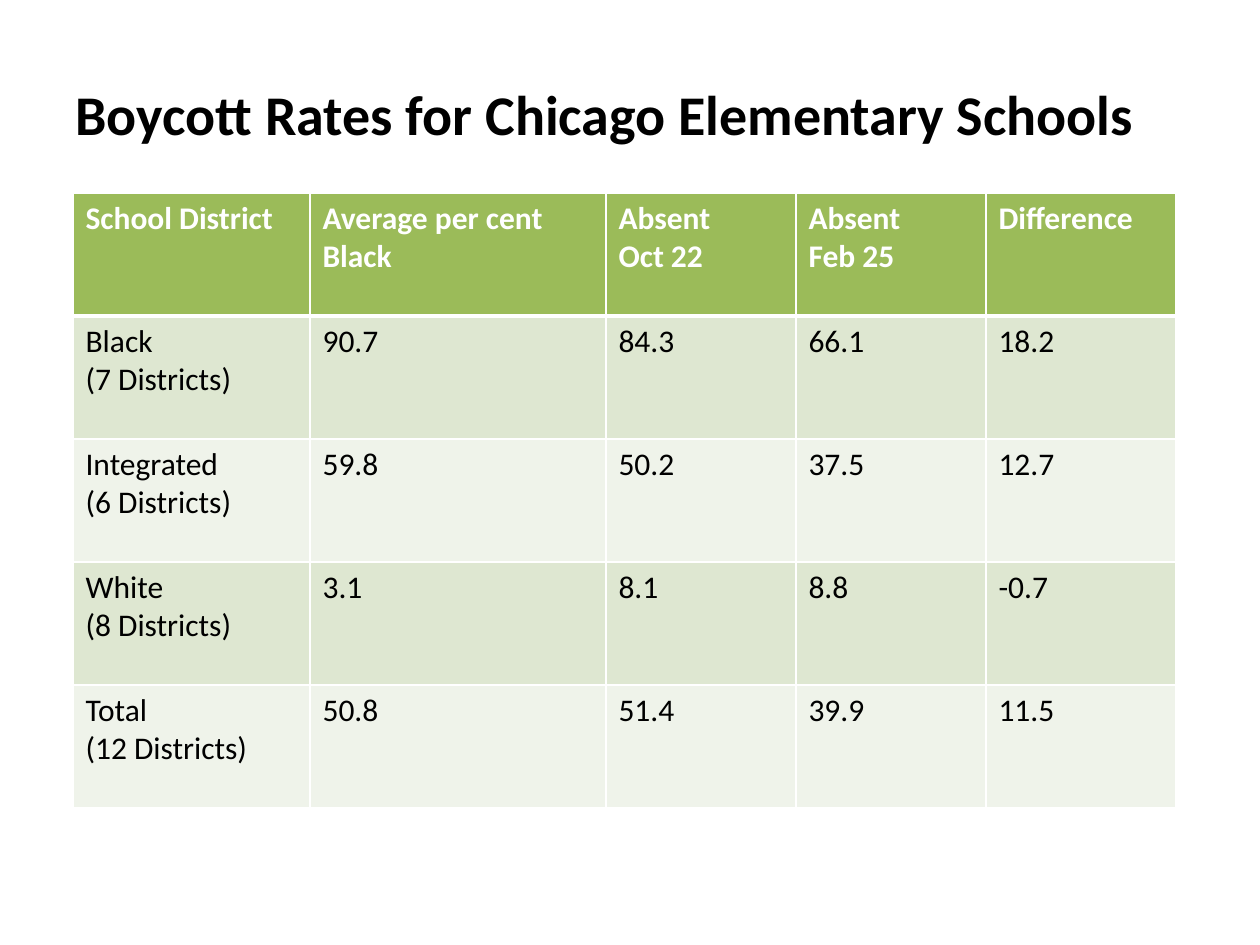
from lxml.etree import SubElement
from pptx import Presentation
from pptx.dml.color import RGBColor
from pptx.enum.text import MSO_ANCHOR, PP_ALIGN
from pptx.oxml.ns import qn
from pptx.util import Inches, Pt

PX = Inches(1) // 126
FONT = "Calibri"
HEADER_FILL, BAND_FILLS = "9BBB59", ("DEE7D1", "EFF3EA")
WHITE, BLACK = "FFFFFF", "000000"

TITLE = "Boycott Rates for Chicago Elementary Schools"
COL_WIDTHS = (237, 296, 190, 190, 190)
ROWS = (
    ("School District", "Average per cent Black", "Absent\nOct 22",
     "Absent\nFeb 25", "Difference"),
    ("Black\n(7 Districts)", "90.7", "84.3", "66.1", "18.2"),
    ("Integrated\n(6 Districts)", "59.8", "50.2", "37.5", "12.7"),
    ("White\n(8 Districts)", "3.1", "8.1", "8.8", "-0.7"),
    ("Total\n(12 Districts)", "50.8", "51.4", "39.9", "11.5"),
)


def px(*lengths):
    return [n * PX for n in lengths]


def rgb(value):
    return RGBColor.from_string(value)


def format_text(tf, size, color, bold):
    for p in tf.paragraphs:
        p.alignment = PP_ALIGN.LEFT
        for r in p.runs:
            values = {"name": FONT, "size": Pt(size), "bold": bold}
            for name, value in values.items():
                setattr(r.font, name, value)
            r.font.color.rgb = rgb(color)


def set_borders(cell, widths):
    """Draw white borders; widths maps a side (L, R, T, B) to points."""
    tc_pr = cell._tc.get_or_add_tcPr()
    for i, (side, width) in enumerate(widths.items()):
        line = SubElement(tc_pr, qn(f"a:ln{side}"), w=str(Pt(width)))
        fill = SubElement(line, qn("a:solidFill"))
        SubElement(fill, qn("a:srgbClr"), val=WHITE)
        tc_pr.insert(i, line)  # borders precede the cell fill


def add_title(slide, left, top, width, height):
    sp = slide.shapes.title
    sp.left, sp.top, sp.width, sp.height = px(left, top, width, height)
    tf = sp.text_frame
    tf.text = TITLE
    tf.word_wrap = False
    tf.vertical_anchor = MSO_ANCHOR.TOP
    format_text(tf, 32, BLACK, True)


def add_rates_table(slide, left, top, width, height):
    table = slide.shapes.add_table(
        len(ROWS), len(COL_WIDTHS), *px(left, top, width, height)).table
    for column, col_width in zip(table.columns, COL_WIDTHS):
        column.width = col_width * PX
    for i, texts in enumerate(ROWS):
        header = i == 0
        fill = HEADER_FILL if header else BAND_FILLS[(i - 1) % 2]
        for j, text in enumerate(texts):
            cell = table.cell(i, j)
            cell.text = text
            format_text(cell.text_frame, 18, WHITE if header else BLACK, header)
            cell.fill.solid()
            cell.fill.fore_color.rgb = rgb(fill)
            set_borders(cell, {"L": 1, "R": 1, "T": 3 if i == 1 else 1,
                               "B": 3 if header else 1})


def main():
    prs = Presentation()
    prs.slide_width, prs.slide_height = px(1260, 945)
    slide = prs.slides.add_slide(prs.slide_layouts[5])
    add_title(slide, 63, 73, 1095, 81)
    add_rates_table(slide, 73, 193, sum(COL_WIDTHS), 615)
    prs.save("out.pptx")


if __name__ == "__main__":
    main()
